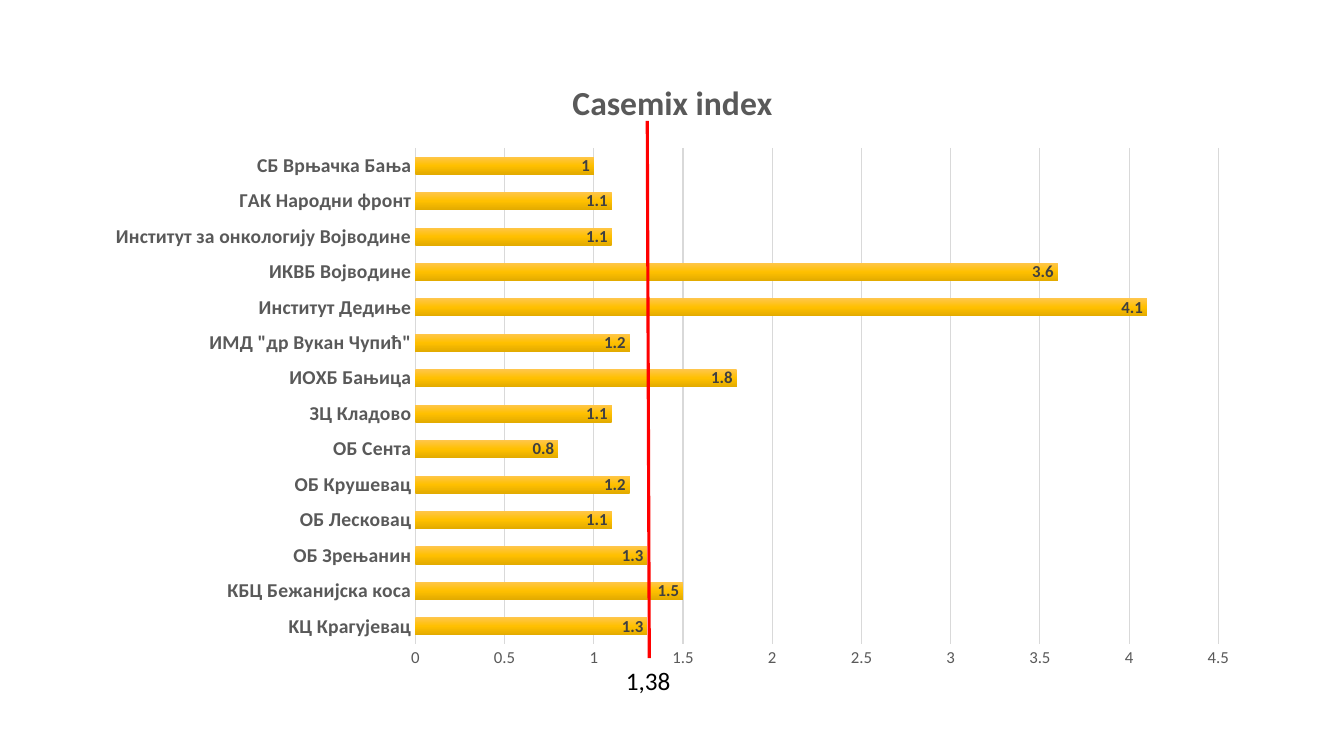
"""Build the casemix index slide: a bar chart with a marked mean."""
from copy import deepcopy
from dataclasses import dataclass

from pptx import Presentation
from pptx.chart.data import CategoryChartData
from pptx.dml.color import RGBColor
from pptx.enum.chart import XL_CHART_TYPE, XL_LABEL_POSITION, XL_TICK_MARK
from pptx.enum.shapes import MSO_CONNECTOR
from pptx.enum.text import MSO_AUTO_SIZE
from pptx.oxml.ns import qn
from pptx.oxml.xmlchemy import OxmlElement
from pptx.util import Inches, Pt

BAR = XL_CHART_TYPE.BAR_CLUSTERED
INSIDE = XL_LABEL_POSITION.INSIDE_END
NO_TICK = XL_TICK_MARK.NONE
STRAIGHT = MSO_CONNECTOR.STRAIGHT
GROW = MSO_AUTO_SIZE.SHAPE_TO_FIT_TEXT

SCORES = [
    ("KЦ Крагујевац", 1.3),
    ("КБЦ Бежанијска коса", 1.5),
    ("ОБ Зрењанин", 1.3),
    ("ОБ Лесковац", 1.1),
    ("ОБ Крушевац", 1.2),
    ("ОБ Сента", 0.8),
    ("ЗЦ Кладово", 1.1),
    ("ИОХБ Бањица", 1.8),
    ("ИМД \"др Вукан Чупић\"", 1.2),
    ("Институт Дедиње", 4.1),
    ("ИКВБ Војводине", 3.6),
    ("Институт за онкологију Војводине", 1.1),
    ("ГАК Народни фронт", 1.1),
    ("СБ Врњачка Бања", 1),
]


@dataclass(frozen=True)
class Theme:
    """Colours, font and type sizes."""
    face: str = "Calibri"
    ink: str = "000000"
    grey: str = "595959"
    dark: str = "404040"
    rule: str = "D9D9D9"
    mark: str = "FF0000"
    gold: tuple = ("FFC64B", "FFC000", "E3AB00")
    head: int = 24
    note: int = 18
    name: int = 14
    tick: int = 12
    base: int = 10


class Deck:
    """Holds the theme and the current slide."""

    def __init__(self, show, theme):
        self.theme = theme
        self.slide = show.slides.add_slide(show.slide_layouts[6])

    def style(self, font, size, color, bold=False):
        """Set face, size, colour and weight of a font."""
        font.name = self.theme.face
        font.size = Pt(size)
        font.bold = bold
        font.color.rgb = RGBColor.from_string(color)

    def stroke(self, line, color, width):
        """Set colour and width of a line."""
        line.color.rgb = RGBColor.from_string(color)
        line.width = Pt(width)

    def shade(self, series):
        """Fill a series with an even gradient from top to bottom."""
        fill = series.format.fill
        fill.gradient()
        fill.gradient_angle = 270
        stops = series._element.find(".//" + qn("a:gsLst"))
        stops.append(deepcopy(stops[-1]))
        last = len(self.theme.gold) - 1
        for i, (stop, color) in enumerate(zip(fill.gradient_stops, self.theme.gold)):
            stop.position = i / last
            stop.color.rgb = RGBColor.from_string(color)

    def chart(self, title, rows, left, top, width, height):
        """Add a bar chart of named scores."""
        look = self.theme
        data = CategoryChartData()
        data.categories = [name for name, _ in rows]
        data.add_series("Series 1", [score for _, score in rows])
        chart = self.slide.shapes.add_chart(
            BAR, Inches(left), Inches(top), Inches(width), Inches(height), data).chart
        self.style(chart.font, look.base, look.ink)
        chart.has_legend = False
        chart.has_title = True
        head = chart.chart_title.text_frame
        head.text = title
        self.style(head.paragraphs[0].font, look.head, look.grey, True)

        names, scale = chart.category_axis, chart.value_axis
        for axis in (names, scale):
            axis.major_tick_mark = axis.minor_tick_mark = NO_TICK
        self.style(names.tick_labels.font, look.name, look.grey, True)
        self.stroke(names.format.line, look.rule, 1)
        self.style(scale.tick_labels.font, look.tick, look.grey)
        scale.format.line.fill.background()
        scale.minimum_scale, scale.maximum_scale, scale.major_unit = 0, 4.5, 0.5
        self.stroke(scale.major_gridlines.format.line, look.rule, 0.75)

        plot = chart.plots[0]
        plot.gap_width = 100
        plot.vary_by_categories = False
        self.shade(plot.series[0])
        labels = plot.series[0].data_labels
        labels.show_value = True
        labels.position = INSIDE
        self.style(labels.font, look.tick, look.dark, True)

    def line(self, start, end):
        """Add a straight marker line."""
        x, y = map(Inches, start)
        line = self.slide.shapes.add_connector(STRAIGHT, x, y, *map(Inches, end))
        self.stroke(line.line, self.theme.mark, 2.25)
        line._element.spPr.append(OxmlElement("a:effectLst"))

    def text(self, words, left, top, width, height):
        """Add a one-line text box."""
        box = self.slide.shapes.add_textbox(
            Inches(left), Inches(top), Inches(width), Inches(height))
        frame = box.text_frame
        frame.word_wrap = False
        frame.auto_size = GROW
        frame.text = words
        self.style(frame.paragraphs[0].font, self.theme.note, self.theme.ink)


def main():
    """Build and save the slide."""
    show = Presentation()
    show.slide_width, show.slide_height = Inches(13.33), Inches(7.5)
    deck = Deck(show, Theme())
    deck.chart("Casemix index", SCORES, 0.92, 0.56, 11.5, 6.19)
    deck.line((6.42, 1.2), (6.44, 6.53))
    deck.text("1,38", 6.11, 6.55, 0.65, 0.4)
    show.save("out.pptx")


if __name__ == "__main__":
    main()
